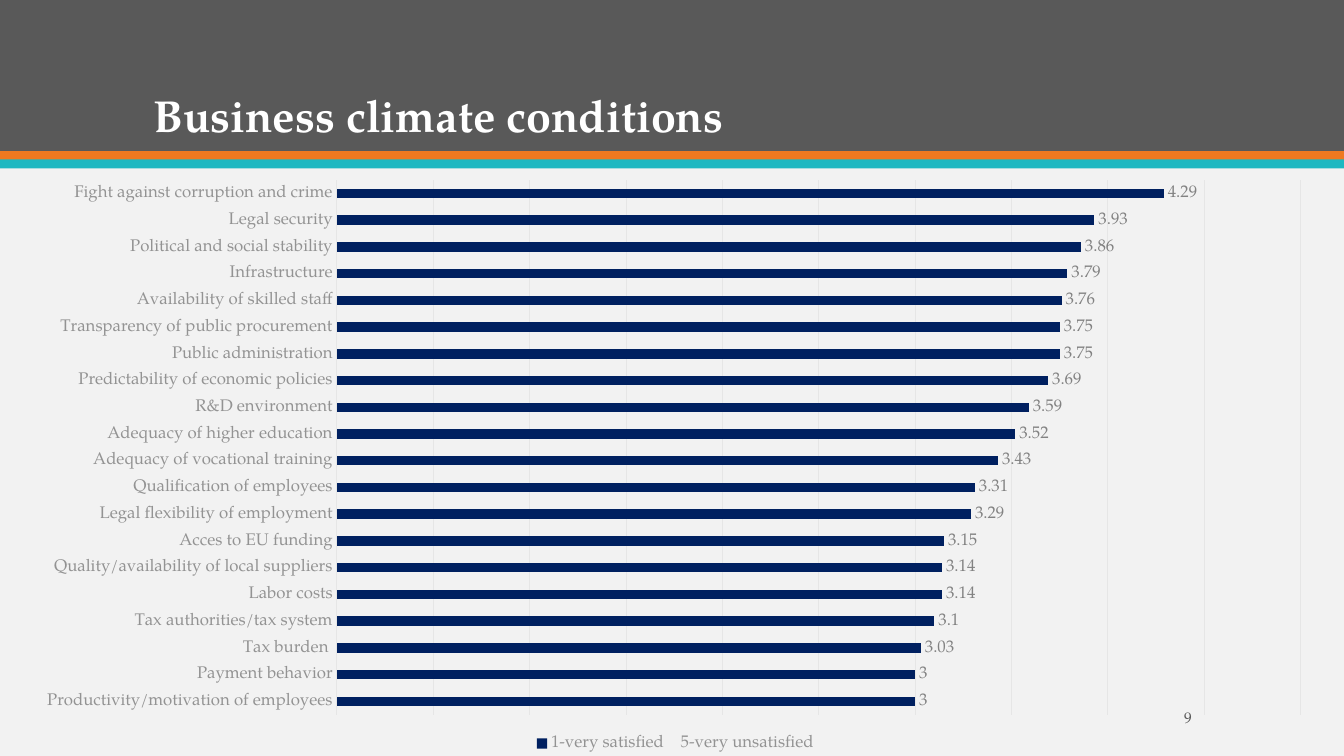
from lxml import etree
from pptx import Presentation
from pptx.chart.data import CategoryChartData
from pptx.dml.color import RGBColor
from pptx.enum.chart import XL_CHART_TYPE, XL_LABEL_POSITION, XL_LEGEND_POSITION, XL_TICK_LABEL_POSITION, XL_TICK_MARK
from pptx.enum.shapes import MSO_SHAPE
from pptx.enum.text import MSO_ANCHOR, PP_ALIGN
from pptx.oxml.ns import qn
from pptx.util import Inches, Pt

BAR = XL_CHART_TYPE.BAR_CLUSTERED
OUT = XL_LABEL_POSITION.OUTSIDE_END
LOW = XL_LEGEND_POSITION.BOTTOM
HIDE = XL_TICK_LABEL_POSITION.NONE
BARE = XL_TICK_MARK.NONE
RECT = MSO_SHAPE.RECTANGLE
BASE, MID = MSO_ANCHOR.BOTTOM, MSO_ANCHOR.MIDDLE
LEFT, RIGHT = PP_ALIGN.LEFT, PP_ALIGN.RIGHT

TITLE = "Business climate conditions"
PAGE = "9"
SCALE = "1-very satisfied    5-very unsatisfied"
SCORES = [
    ("Productivity/motivation of employees", 3),
    ("Payment behavior", 3),
    ("Tax burden ", 3.03),
    ("Tax authorities/tax system", 3.1),
    ("Labor costs", 3.14),
    ("Quality/availability of local suppliers", 3.14),
    ("Acces to EU funding", 3.15),
    ("Legal flexibility of employment", 3.29),
    ("Qualification of employees", 3.31),
    ("Adequacy of vocational training", 3.43),
    ("Adequacy of higher education", 3.52),
    ("R&D environment", 3.59),
    ("Predictability of economic policies", 3.69),
    ("Public administration", 3.75),
    ("Transparency of public procurement", 3.75),
    ("Availability of skilled staff", 3.76),
    ("Infrastructure", 3.79),
    ("Political and social stability", 3.86),
    ("Legal security", 3.93),
    ("Fight against corruption and crime", 4.29),
]
FACE = "TeX Gyre Pagella"
HEX = {"back": "F2F2F2", "head": "595959", "warm": "EF7920", "cool": "1EB8C1",
       "white": "FFFFFF", "bar": "002060", "grid": "E6E6E6",
       "axis": "939393", "label": "828282"}
WIDE, HIGH = 13.33, 7.5
BANDS = [("head", 0, 1.5), ("warm", 1.5, 0.09), ("cool", 1.58, 0.09)]
PLOT = {"x": 0.24, "y": 0.02, "w": 0.74, "h": 0.91}


def color(key):
    return RGBColor.from_string(HEX[key])


def style(font, size, key, bold=False):
    font.name, font.size, font.bold = FACE, Pt(size), bold
    font.color.rgb = color(key)


def rule(line):
    line.color.rgb = color("grid")
    line.width = Pt(0.75)


def write(shape, text, size, key, anchor, align, bold=False):
    frame = shape.text_frame
    frame.text = text
    frame.word_wrap = True
    frame.vertical_anchor = anchor
    para = frame.paragraphs[0]
    para.alignment = align
    style(para.runs[0].font, size, key, bold)
    return para


def place(shape, *box):
    shape.left, shape.top, shape.width, shape.height = map(Inches, box)


def draw_bands(slide):
    for key, top, tall in BANDS:
        band = slide.shapes.add_shape(RECT, 0, Inches(top), Inches(WIDE), Inches(tall))
        band.shadow.inherit = False
        band.fill.solid()
        band.fill.fore_color.rgb = color(key)
        band.line.fill.background()


def draw_title(slide):
    title = slide.shapes.title
    place(title, 1.42, 0.33, 10.5, 1.13)
    write(title, TITLE, 32, "white", BASE, LEFT, True).line_spacing = 0.9
    title.element.getparent().append(title.element)


def set_plot(chart):
    area = chart.element.find(".//" + qn("c:plotArea"))
    for old in area.findall(qn("c:layout")):
        area.remove(old)
    layout = etree.Element(qn("c:layout"))
    area.insert(0, layout)
    box = etree.SubElement(layout, qn("c:manualLayout"))
    rows = [("layoutTarget", "inner"), ("xMode", "edge"), ("yMode", "edge")]
    for tag, val in rows + list(PLOT.items()):
        etree.SubElement(box, qn("c:" + tag)).set("val", str(val))


def draw_chart(slide):
    data = CategoryChartData()
    names, vals = zip(*SCORES)
    data.categories = names
    data.add_series(SCALE, vals)
    box = map(Inches, (0.24, 1.67, 12.92, 5.83))
    chart = slide.shapes.add_chart(BAR, *box, data).chart
    style(chart.font, 14, "head")
    chart.has_title = False
    chart.has_legend = True
    chart.legend.position = LOW
    chart.legend.include_in_layout = False
    style(chart.legend.font, 12, "axis")

    cat = chart.category_axis
    cat.major_tick_mark = cat.minor_tick_mark = BARE
    cat.has_major_gridlines = False
    style(cat.tick_labels.font, 12, "axis")
    rule(cat.format.line)

    axis = chart.value_axis
    axis.minimum_scale, axis.maximum_scale, axis.major_unit = 0, 5, 0.5
    axis.has_major_gridlines = True
    rule(axis.major_gridlines.format.line)
    axis.tick_label_position = HIDE
    axis.major_tick_mark = axis.minor_tick_mark = BARE
    axis.format.line.fill.background()

    plot = chart.plots[0]
    plot.gap_width = 182
    plot.vary_by_categories = False
    fill = plot.series[0].format.fill
    fill.solid()
    fill.fore_color.rgb = color("bar")
    plot.has_data_labels = True
    tags = plot.data_labels
    tags.show_value = True
    tags.position = OUT
    style(tags.font, 12, "label")
    set_plot(chart)


def main():
    deck = Presentation()
    deck.slide_width, deck.slide_height = Inches(WIDE), Inches(HIGH)
    slide = deck.slides.add_slide(deck.slide_layouts[5])
    slide.background.fill.solid()
    slide.background.fill.fore_color.rgb = color("back")
    draw_bands(slide)
    draw_title(slide)
    draw_chart(slide)
    page = slide.shapes.add_textbox(*map(Inches, (10.42, 6.97, 1.5, 0.3)))
    write(page, PAGE, 11, "head", MID, RIGHT)
    deck.save("out.pptx")


if __name__ == "__main__":
    main()
